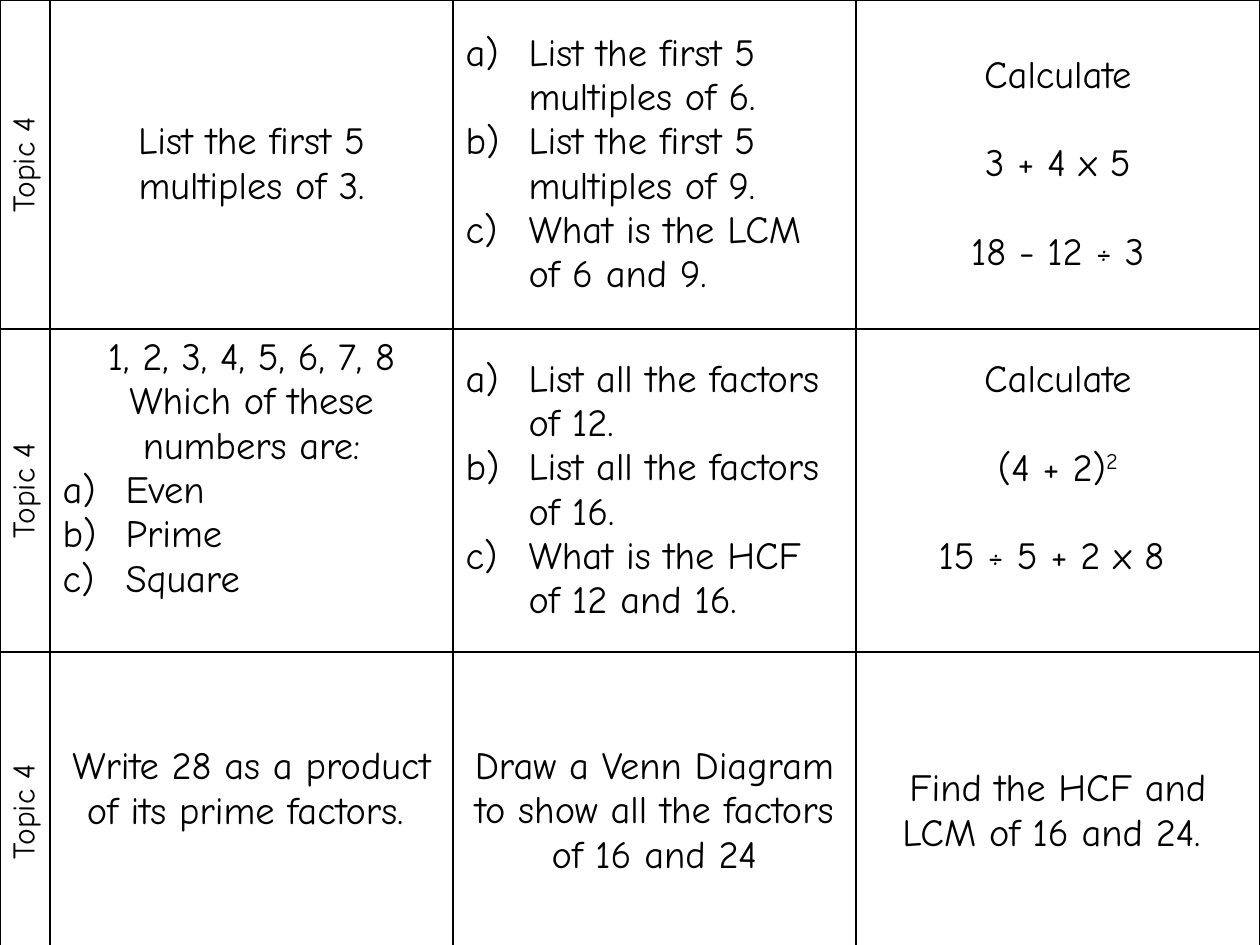
import pptx
import pptx.util
import pptx.dml.color
import pptx.enum.text
import pptx.oxml
import pptx.oxml.ns
from dataclasses import dataclass


@dataclass(frozen=True)
class Theme:
    font: str = "Comic Neue"
    ink: str = "000000"
    label_size: int = 18
    body_size: int = 22
    line_gap: float = 25.3  # one body line, in points
    border: int = 1


THEME = Theme()

# Content: each cell lists (style, text); "^" starts a superscript ending
TOPIC = "Topic 4"
CELLS = [
    [
        [("plain", "List the first 5 multiples of 3.")],
        [("item", "List the first 5 multiples of 6."),
         ("item", "List the first 5 multiples of 9."),
         ("item", "What is the LCM of 6 and 9.")],
        [("plain", "Calculate"), ("spaced", "3 + 4 x 5"),
         ("spaced", "18 - 12 ÷ 3")],
    ],
    [
        [("plain", "1, 2, 3, 4, 5, 6, 7, 8"),
         ("plain", "Which of these numbers are:"),
         ("item", "Even"), ("item", "Prime"), ("item", "Square")],
        [("item", "List all the factors of 12."),
         ("item", "List all the factors of 16."),
         ("item", "What is the HCF of 12 and 16.")],
        [("plain", "Calculate"), ("spaced", "(4 + 2)^2"),
         ("spaced", "15 ÷ 5 + 2 x 8 ")],
    ],
    [
        [("plain", "Write 28 as a product of its prime factors. ")],
        [("plain", "Draw a Venn Diagram to show all the factors of 16 and 24")],
        [("plain", "Find the HCF and LCM of 16 and 24. ")],
    ],
]
RAISED = {(1, 0), (1, 2), (2, 0)}  # cells whose text sits half a line higher

# Geometry in px
SCALE = 914400 // 126
SLIDE = (1260, 945)
COLUMNS = [50, 403, 403, 404]
ROWS = [329, 323, 319]
INDENT = 63
RAISED_MARGIN = 50


def px(length):
    return pptx.util.Emu(length * SCALE)


def add_borders(cell):
    properties = cell._tc.get_or_add_tcPr()
    for index, side in enumerate("LRTB"):
        properties.insert(index, pptx.oxml.parse_xml(
            f'<a:ln{side} {pptx.oxml.ns.nsdecls("a")} w="{THEME.border * 12700}">'
            f'<a:solidFill><a:srgbClr val="{THEME.ink}"/></a:solidFill>'
            f'</a:ln{side}>'))


def write_paragraph(para, style, text, size):
    if style == "item":
        properties = para._p.get_or_add_pPr()
        properties.set("marL", str(px(INDENT)))
        properties.set("indent", str(-px(INDENT)))
        properties.append(pptx.oxml.parse_xml(
            f'<a:buAutoNum {pptx.oxml.ns.nsdecls("a")} type="alphaLcParenR"/>'))
    else:
        para.alignment = pptx.enum.text.PP_ALIGN.CENTER
    if style == "spaced":
        para.space_before = pptx.util.Pt(THEME.line_gap)
    para.font.name = THEME.font
    para.font.size = pptx.util.Pt(size)
    para.font.color.rgb = pptx.dml.color.RGBColor.from_string(THEME.ink)
    base, _, power = text.partition("^")
    para.add_run().text = base
    if power:
        span = para.add_run()
        span.text = power
        span.font._element.set("baseline", "30000")


def fill_cell(cell, lines, size):
    cell.fill.background()
    add_borders(cell)
    for index, (style, text) in enumerate(lines):
        frame = cell.text_frame
        para = frame.add_paragraph() if index else frame.paragraphs[0]
        write_paragraph(para, style, text, size)


def main():
    deck = pptx.Presentation()
    deck.slide_width, deck.slide_height = map(px, SLIDE)
    page = deck.slides.add_slide(deck.slide_layouts[6])

    # Question grid
    grid = page.shapes.add_table(len(ROWS), len(COLUMNS), 0, 0,
                                 px(sum(COLUMNS)), px(sum(ROWS))).table
    grid.first_row = grid.horz_banding = False
    for column, width in zip(grid.columns, COLUMNS):
        column.width = px(width)

    for r, (height, questions) in enumerate(zip(ROWS, CELLS)):
        grid.rows[r].height = px(height)

        # Turned topic label
        label = grid.cell(r, 0)
        fill_cell(label, [("plain", TOPIC)], THEME.label_size)
        label._tc.get_or_add_tcPr().set("vert", "vert270")

        # Questions
        for c, lines in enumerate(questions):
            cell = grid.cell(r, c + 1)
            fill_cell(cell, lines, THEME.body_size)
            cell.vertical_anchor = pptx.enum.text.MSO_ANCHOR.MIDDLE
            if (r, c) in RAISED:
                cell.margin_bottom = px(RAISED_MARGIN)

    deck.save("out.pptx")


if __name__ == "__main__":
    main()
